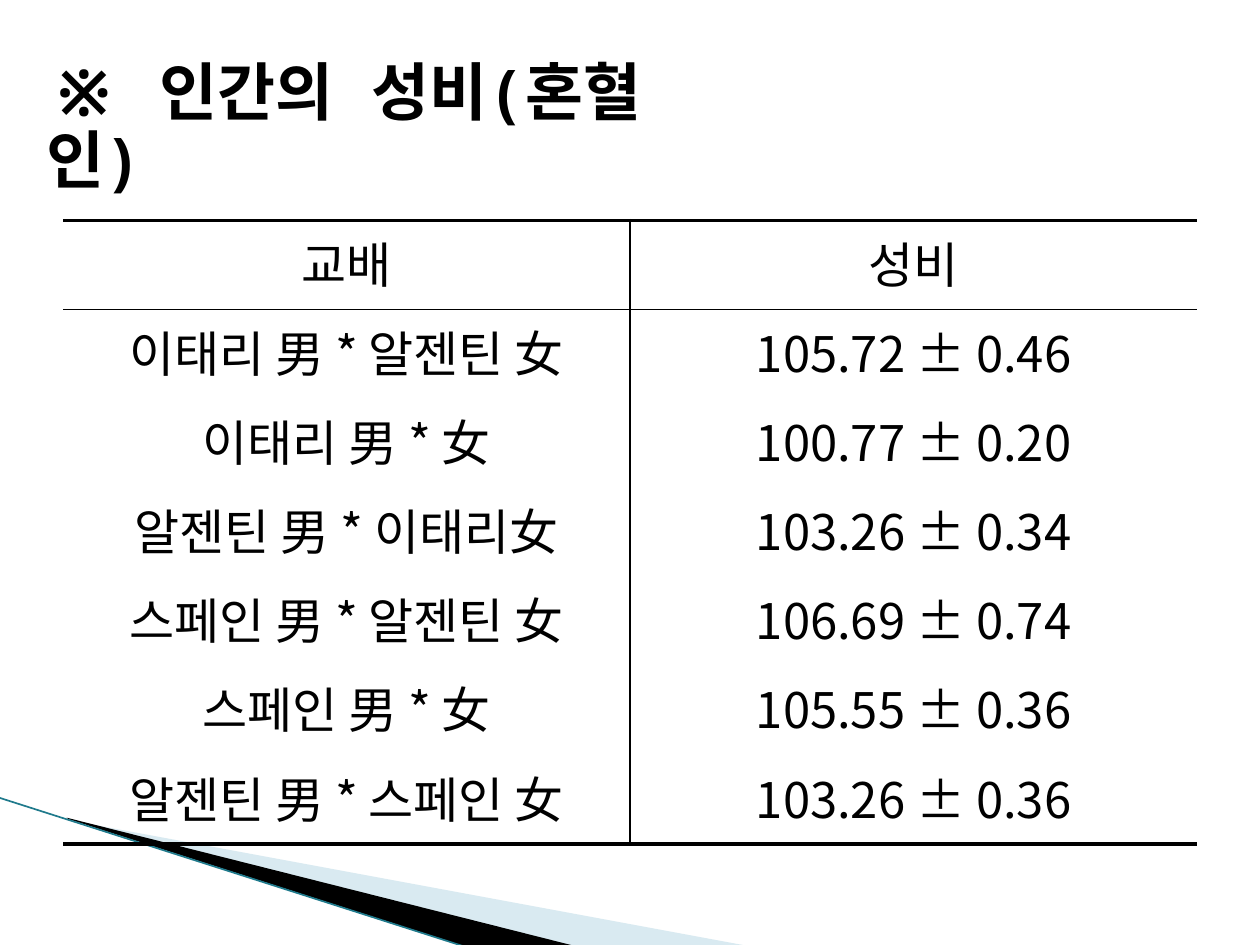
from lxml import etree
from pptx import Presentation
from pptx.dml.color import RGBColor
from pptx.enum.shapes import MSO_CONNECTOR
from pptx.enum.text import MSO_ANCHOR, PP_ALIGN
from pptx.oxml.ns import qn
from pptx.util import Inches, Pt

STRAIGHT = MSO_CONNECTOR.STRAIGHT
MIDDLE, TOP = MSO_ANCHOR.MIDDLE, MSO_ANCHOR.TOP
CENTER = PP_ALIGN.CENTER

COLORS = {"ink": "000000", "pale": "A0CBDC", "teal": "1F7A8C"}
TITLE_FONT, TABLE_FONT = "Noto Sans Mono", "Noto Sans CJK KR"


def add_run(paragraph, text, font, size, bold=False):
    run = paragraph.add_run()
    run.text = text
    run.font.name, run.font.size, run.font.bold = font, Pt(size), bold
    run.font.color.rgb = RGBColor.from_string(COLORS["ink"])
    etree.SubElement(run._r.get_or_add_rPr(), qn("a:ea"), typeface=font)


def set_border(cell, side, width):
    line = etree.SubElement(cell._tc.get_or_add_tcPr(), qn(f"a:ln{side}"), w=str(Pt(width)))
    if width:
        fill = etree.SubElement(line, qn("a:solidFill"))
        etree.SubElement(fill, qn("a:srgbClr"), val=COLORS["ink"])
    else:
        etree.SubElement(line, qn("a:noFill"))


prs = Presentation()
prs.slide_width, prs.slide_height = Inches(10), Inches(7.5)
slide = prs.slides.add_slide(prs.slide_layouts[6])
shapes = slide.shapes

# Corner decoration: two wedges and a thin edge line
wedges = [
    ("pale", 40, [(0.55, 6.51), (5.95, 7.51), (4.56, 7.51), (0.55, 6.5)]),
    ("ink", 100, [(0.53, 6.49), (4.57, 7.51), (3.72, 7.52), (0.54, 6.5)]),
]
for color, opacity, points in wedges:
    corners = [(Inches(x), Inches(y)) for x, y in points]
    builder = shapes.build_freeform(*corners[0], scale=1.0)
    builder.add_line_segments(corners[1:], close=True)
    wedge = builder.convert_to_shape()
    wedge.shadow.inherit = False
    wedge.fill.solid()
    wedge.fill.fore_color.rgb = RGBColor.from_string(COLORS[color])
    wedge.line.fill.background()
    if opacity < 100:
        tint = wedge._element.spPr.find(qn("a:solidFill"))[0]
        etree.SubElement(tint, qn("a:alpha"), val=str(opacity * 1000))

edge = shapes.add_connector(STRAIGHT, Inches(-0.01), Inches(6.33), Inches(3.71), Inches(7.52))
edge.line.color.rgb = RGBColor.from_string(COLORS["teal"])
edge.line.width = Pt(0.95)
etree.SubElement(edge._element.spPr, qn("a:effectLst"))

# Title
title = shapes.add_textbox(Inches(0.27), Inches(0.52), Inches(5.6), Inches(1.01)).text_frame
title.word_wrap = True
title.vertical_anchor = MIDDLE
title.paragraphs[0].line_spacing = 0.9
add_run(title.paragraphs[0], "※ 인간의 성비(혼혈인)", TITLE_FONT, 36, bold=True)

# Sex ratio by cross
ratios = [
    ("교배", "성비"),
    ("이태리 男 * 알젠틴 女", "105.72 ± 0.46"),
    ("이태리 男 * 女", "100.77 ± 0.20"),
    ("알젠틴 男 * 이태리女", "103.26 ± 0.34"),
    ("스페인 男 * 알젠틴 女", "106.69 ± 0.74"),
    ("스페인 男 * 女", "105.55 ± 0.36"),
    ("알젠틴 男 * 스페인 女", "103.26 ± 0.36"),
]
table = shapes.add_table(len(ratios), 2, Inches(0.5), Inches(1.75), Inches(9), Inches(4.95)).table
table.first_row = table.horz_banding = False

# Rule widths above each row, ending with the one below the last row
rules = [2.25, 1] + [0] * (len(ratios) - 2) + [2.25]
for row, entries in enumerate(ratios):
    for col, text in enumerate(entries):
        cell = table.cell(row, col)
        cell.vertical_anchor = TOP
        set_border(cell, "L", 1 if col == 1 else 0)
        set_border(cell, "R", 1 if col == 0 else 0)
        set_border(cell, "T", rules[row])
        set_border(cell, "B", rules[row + 1])
        cell.fill.background()
        paragraph = cell.text_frame.paragraphs[0]
        paragraph.alignment = CENTER
        add_run(paragraph, text, TABLE_FONT, 28)

prs.save("out.pptx")
